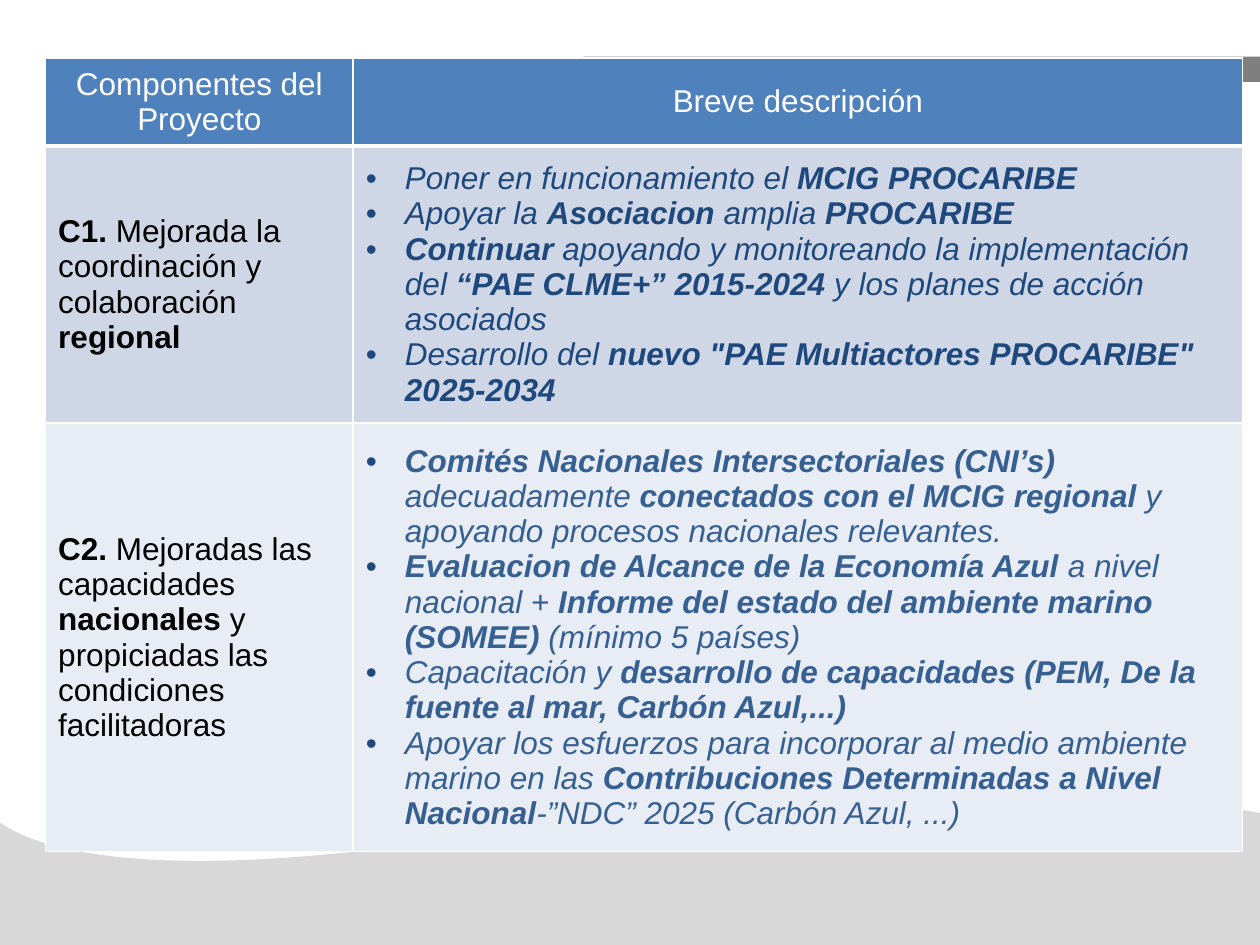
from lxml.etree import SubElement
from pptx import Presentation
from pptx.dml.color import RGBColor
from pptx.enum.shapes import MSO_SHAPE
from pptx.enum.text import MSO_ANCHOR, PP_ALIGN
from pptx.oxml.ns import qn
from pptx.util import Cm, Pt


def paint(target, color):
    target.fill.solid()
    target.fill.fore_color.rgb = RGBColor.from_string(color)


def write(cell, text, color="000000", italic=False, align=PP_ALIGN.LEFT, bullet=None):
    """Write one paragraph per line; parts between ** marks are bold."""
    for i, line in enumerate(text.split("\n")):
        frame = cell.text_frame
        para = frame.add_paragraph() if i else frame.paragraphs[0]
        para.alignment = align
        if bullet:
            props = para._p.get_or_add_pPr()
            props.set("marL", str(Cm(0.79)))
            props.set("indent", str(-Cm(0.79)))
            tint = SubElement(props, qn("a:buClr"))
            SubElement(tint, qn("a:srgbClr"), val=bullet)
            SubElement(props, qn("a:buFont"), typeface="Arial")
            SubElement(props, qn("a:buChar"), char="•")
        for j, part in enumerate(line.split("**")):
            if part:
                run = para.add_run()
                run.text = part
                font = run.font
                font.name, font.size = "Arial", Pt(18)
                font.bold, font.italic = j % 2 == 1, italic
                font.color.rgb = RGBColor.from_string(color)


deck = Presentation()
deck.slide_width, deck.slide_height = Cm(25.4), Cm(19.05)
slide = deck.slides.add_slide(deck.slide_layouts[6])
shapes = slide.shapes

# Background bar and wave
bar = shapes.add_shape(MSO_SHAPE.RECTANGLE, Cm(11.76), Cm(1.14), Cm(13.72), Cm(0.51))

curves = [
    [(25.5, 16.41), (22.28, 15.8), (17.25, 15.65), (9.6, 16.84)],
    [(9.6, 16.84), (2.54, 17.96), (0.48, 16.97), (-0.05, 16.54)],
]
steps = 40
points = [curves[0][0]]
for a, b, c, d in curves:
    for n in range(1, steps + 1):
        t = n / steps
        u = 1 - t
        points.append(tuple(
            u**3 * a[k] + 3 * u * u * t * b[k] + 3 * u * t * t * c[k] + t**3 * d[k]
            for k in (0, 1)
        ))
points.append((-0.05, 19.05))
path = shapes.build_freeform(Cm(25.5), Cm(19.05))
path.add_line_segments([(Cm(x), Cm(y)) for x, y in points], close=True)
wave = path.convert_to_shape()

for shape, color in ((bar, "7F7F7F"), (wave, "D8D8D8")):
    shape.shadow.inherit = False
    paint(shape, color)
    shape.line.fill.background()

# Table of project components
rows = [
    ("Componentes del Proyecto", "Breve descripción"),
    (
        "**C1.** Mejorada la coordinación y colaboración **regional**",
        "Poner en funcionamiento el **MCIG PROCARIBE**\n"
        "Apoyar la **Asociacion **amplia **PROCARIBE**\n"
        "**Continuar **apoyando y monitoreando la implementación del "
        "**“PAE CLME+” 2015-2024 **y los planes de acción asociados\n"
        "Desarrollo del **nuevo \"PAE Multiactores PROCARIBE\" 2025-2034**",
    ),
    (
        "**C2.** Mejoradas las capacidades **nacionales** y propiciadas "
        "las condiciones facilitadoras",
        "**Comités Nacionales Intersectoriales (CNI’s) **adecuadamente "
        "**conectados con el MCIG regional **y apoyando procesos "
        "nacionales relevantes.\n"
        "**Evaluacion de Alcance de la Economía Azul **a nivel nacional + "
        "**Informe del estado del ambiente marino (SOMEE) **(mínimo 5 países)\n"
        "Capacitación y **desarrollo de capacidades (PEM, De la fuente al mar, "
        "Carbón Azul,...)**\n"
        "Apoyar los esfuerzos para incorporar al medio ambiente marino en las "
        "**Contribuciones Determinadas a Nivel Nacional**-”NDC” 2025 "
        "(Carbón Azul, ...)",
    ),
]
fills = ["4F81BD", "CFD7E7", "E8ECF4"]
inks = ["FFFFFF", "1F497D", "366092"]
table = shapes.add_table(3, 2, Cm(0.92), Cm(1.17), Cm(24.13), Cm(16)).table
for col, width in zip(table.columns, (6.2, 17.93)):
    col.width = Cm(width)
for row, height in zip(table.rows, (1.77, 5.59, 8.64)):
    row.height = Cm(height)

for r, texts in enumerate(rows):
    for c, text in enumerate(texts):
        cell = table.cell(r, c)
        cell.vertical_anchor = MSO_ANCHOR.MIDDLE
        for side in "LRTB":
            thick = (r, side) in ((0, "B"), (1, "T"))
            edge = SubElement(cell._tc.get_or_add_tcPr(), qn("a:ln" + side),
                              w=str(Pt(3 if thick else 1)))
            solid = SubElement(edge, qn("a:solidFill"))
            SubElement(solid, qn("a:srgbClr"), val="FFFFFF")
        paint(cell, fills[r])
        if r == 0:
            write(cell, text, color=inks[r], align=PP_ALIGN.CENTER)
        elif c == 0:
            write(cell, text)
        else:
            write(cell, text, color=inks[r], italic=True, bullet="1F497D")

deck.save("out.pptx")
